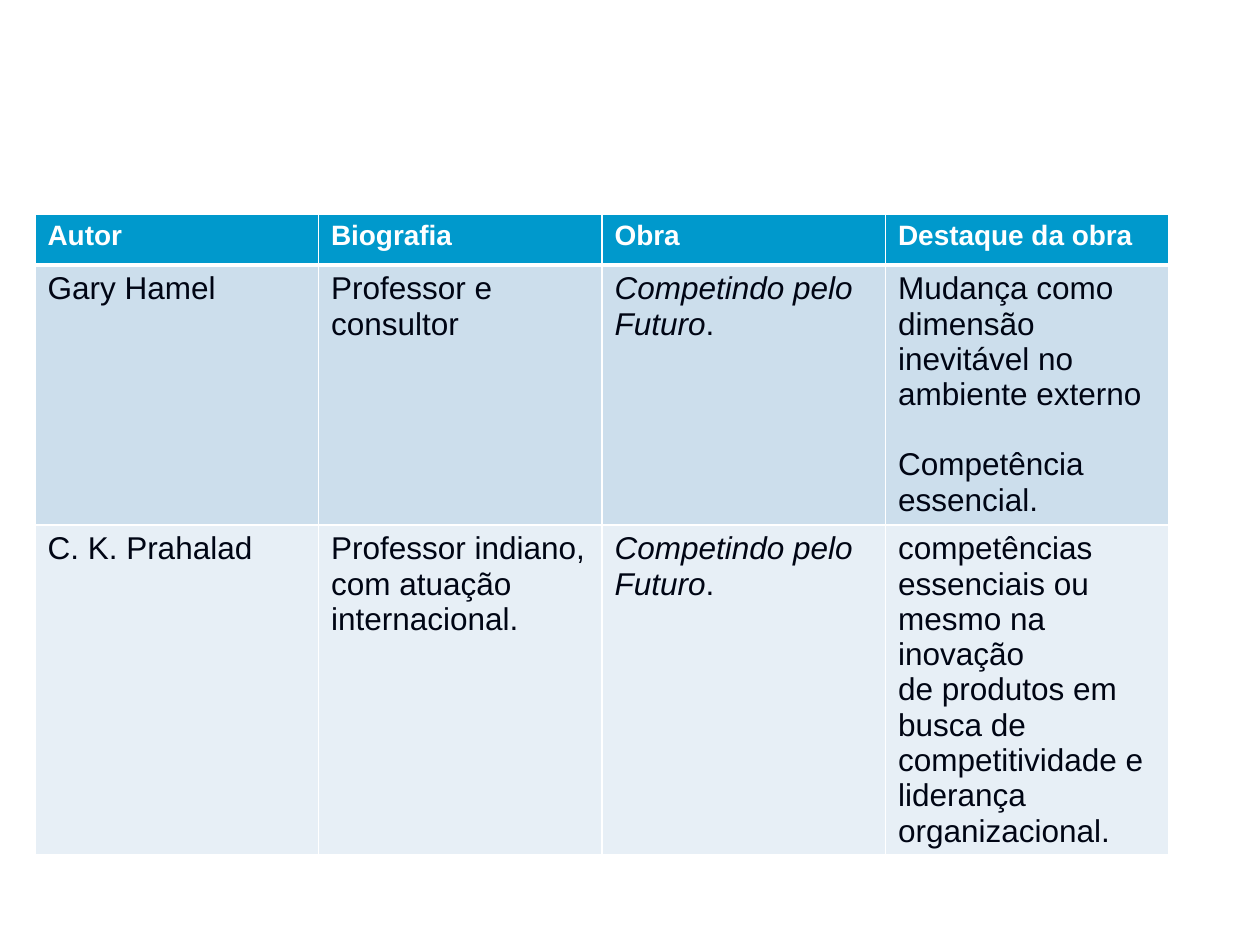
from dataclasses import dataclass

from lxml import etree
from pptx import Presentation
from pptx import util as u
from pptx.dml.color import RGBColor
from pptx.oxml import ns

EMU_PER_PX = 914400 / 126


@dataclass(frozen=True)
class Theme:
    font: str = "Arial"
    header_size: int = 16
    body_size: int = 18
    header_ink: str = "FFFFFF"
    body_ink: str = "000514"
    header_fill: str = "0099CC"
    bands: tuple = ("CCDEEC", "E7EFF6")
    rule: str = "FFFFFF"
    thin: int = 1
    thick: int = 3


THEME = Theme()

HEADINGS = ["Autor", "Biografia", "Obra", "Destaque da obra"]
BOOK = "Competindo pelo Futuro"
# Each cell is a list of paragraphs
AUTHORS = [
    [["Gary Hamel"], ["Professor e consultor"], [BOOK + "."],
     ["Mudança como dimensão inevitável no ambiente externo",
      "Competência essencial."]],
    [["C. K. Prahalad"], ["Professor indiano, com atuação internacional."],
     [BOOK + "."],
     ["competências essenciais ou mesmo na inovação",
      "de produtos em busca de competitividade e liderança",
      "organizacional."]],
]
ROW_HEIGHTS = [51, 260, 330]


def px(length):
    return u.Emu(round(length * EMU_PER_PX))


def set_borders(cell, top, bottom):
    """Rule all four sides; widths are in points."""
    properties = cell._tc.get_or_add_tcPr()
    sides = {"L": THEME.thin, "R": THEME.thin, "T": top, "B": bottom}
    for side, width in sides.items():
        line = etree.SubElement(properties, ns.qn(f"a:ln{side}"), w=str(u.Pt(width)))
        fill = etree.SubElement(line, ns.qn("a:solidFill"))
        etree.SubElement(fill, ns.qn("a:srgbClr"), val=THEME.rule)


def write_paragraph(paragraph, wording, size, ink, bold):
    """Write one paragraph, with the book title in italics."""
    if wording.startswith(BOOK):
        title = paragraph.add_run()
        title.text = BOOK
        title.font.italic = True
        wording = wording[len(BOOK):]
    paragraph.add_run().text = wording
    font = paragraph.font
    font.name, font.size, font.bold = THEME.font, u.Pt(size), bold
    font.color.rgb = RGBColor.from_string(ink)


def fill_cell(cell, wordings, background, size, ink, bold=False,
              top=THEME.thin, bottom=THEME.thin):
    set_borders(cell, top, bottom)
    cell.fill.solid()
    cell.fill.fore_color.rgb = RGBColor.from_string(background)
    frame = cell.text_frame
    for index, wording in enumerate(wordings):
        paragraph = frame.add_paragraph() if index else frame.paragraphs[0]
        write_paragraph(paragraph, wording, size, ink, bold)


def add_author_table(slide):
    table = slide.shapes.add_table(
        len(ROW_HEIGHTS), len(HEADINGS),
        px(35), px(214), px(1134), px(sum(ROW_HEIGHTS))).table
    for row, height in zip(table.rows, ROW_HEIGHTS):
        row.height = px(height)

    # Header row
    for column, heading in enumerate(HEADINGS):
        fill_cell(table.cell(0, column), [heading], THEME.header_fill,
                  THEME.header_size, THEME.header_ink, bold=True,
                  bottom=THEME.thick)

    # One banded row per author
    for row, (author, band) in enumerate(zip(AUTHORS, THEME.bands), start=1):
        top = THEME.thick if row == 1 else THEME.thin
        for column, wordings in enumerate(author):
            fill_cell(table.cell(row, column), wordings, band,
                      THEME.body_size, THEME.body_ink, top=top)
    return table


def main():
    deck = Presentation()
    deck.slide_width, deck.slide_height = px(1260), px(945)
    slide = deck.slides.add_slide(deck.slide_layouts[6])
    authors = add_author_table(slide)

    # Set the second highlight one line apart from the first
    highlights = authors.cell(1, 3).text_frame.paragraphs
    highlights[1].space_before = u.Pt(20)

    deck.save("out.pptx")


if __name__ == "__main__":
    main()
